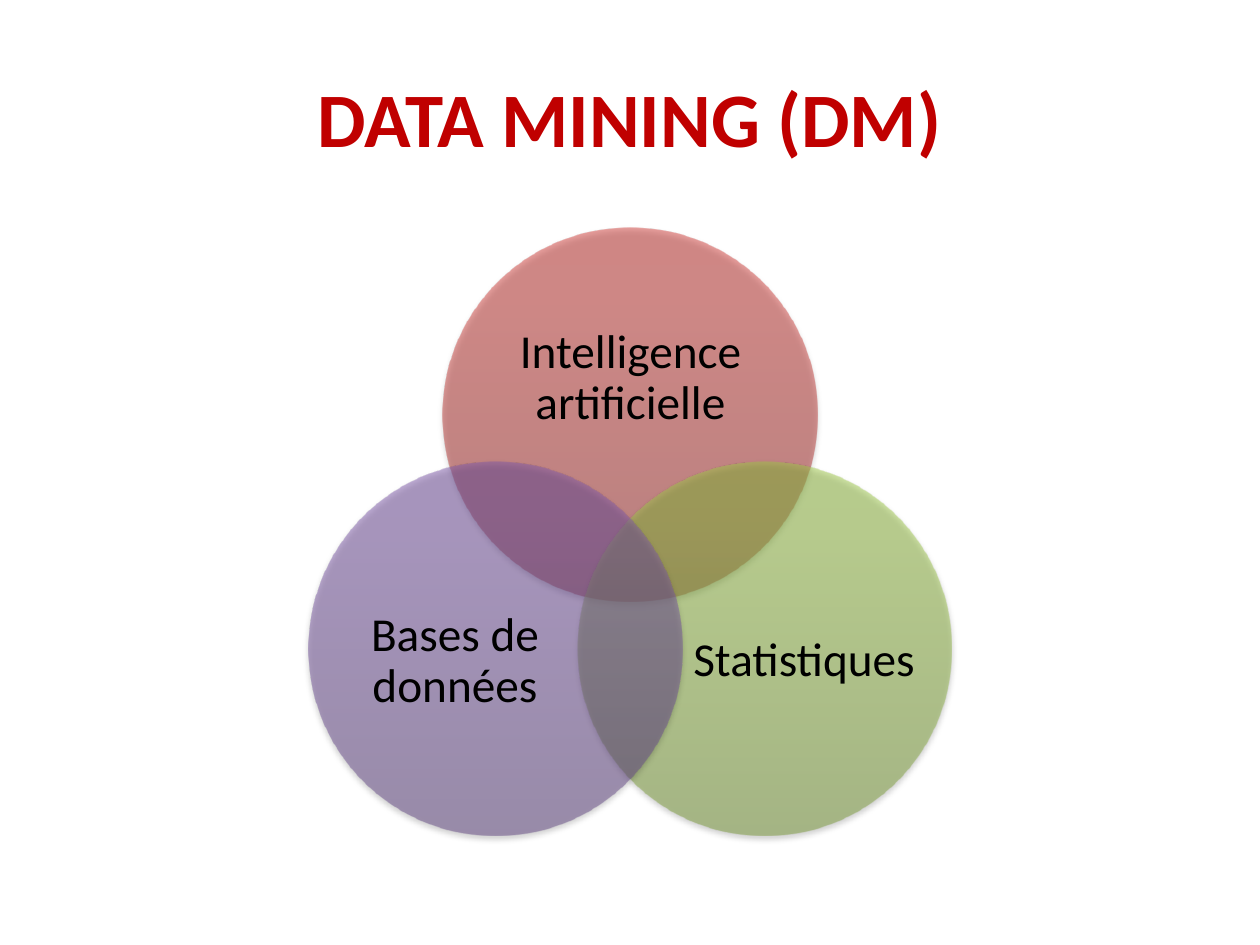
from lxml import etree
from pptx import Presentation
from pptx.dml.color import RGBColor
from pptx.enum.shapes import MSO_SHAPE
from pptx.enum.text import MSO_ANCHOR, PP_ALIGN
from pptx.oxml.ns import qn
from pptx.util import Emu, Pt

OVAL = MSO_SHAPE.OVAL
MIDDLE = MSO_ANCHOR.MIDDLE
CENTER = PP_ALIGN.CENTER
WIDE, HIGH = 1260, 945
SIZE = 374
STOPS = (0, 80, 100)


def px(n):
    """Turn px into EMU at 126 px to the inch."""
    return Emu(round(n * 914400 / 126))


def add_text(slide, text, box, size=27, color="000000", bold=False, lead=0.9):
    """Add centred text in the middle of a box."""
    shape = slide.shapes.add_textbox(*map(px, box))
    frame = shape.text_frame
    frame.word_wrap = True
    frame.vertical_anchor = MIDDLE
    frame.margin_left = frame.margin_right = 0
    frame.margin_top = frame.margin_bottom = 0
    para = frame.paragraphs[0]
    para.alignment = CENTER
    para.line_spacing = lead
    run = para.add_run()
    run.text = text
    run.font.name = "Calibri"
    run.font.size = Pt(size)
    run.font.bold = bold
    run.font.color.rgb = RGBColor.from_string(color)


def add_color(parent, color, alpha):
    """Add a colour with an opacity in percent."""
    node = etree.SubElement(parent, qn("a:srgbClr"), val=color)
    etree.SubElement(node, qn("a:alpha"), val=str(alpha * 1000))


def add_shade(shape, colors):
    """Fill a shape with a half clear gradient that runs upward."""
    shape.fill.gradient()
    shape.fill.gradient_angle = 90
    stops = shape._element.spPr.find(".//" + qn("a:gsLst"))
    for old in list(stops):
        stops.remove(old)
    for pos, color in zip(STOPS, colors):
        stop = etree.SubElement(stops, qn("a:gs"), pos=str(pos * 1000))
        add_color(stop, color, 50)


def add_shadow(shape):
    """Give a shape a soft shadow below it."""
    shape.shadow.inherit = False
    effects = shape._element.spPr.find(qn("a:effectLst"))
    shadow = etree.SubElement(
        effects, qn("a:outerShdw"), blurRad="40000", dist="23000",
        dir="5400000", rotWithShape="0")
    add_color(shadow, "000000", 35)


def add_circle(slide, left, top, colors):
    """Add one circle of the diagram."""
    box = (left, top, SIZE, SIZE)
    shape = slide.shapes.add_shape(OVAL, *map(px, box))
    shape.line.fill.background()
    add_shade(shape, colors)
    add_shadow(shape)


def main():
    """Build the slide and save it."""
    deck = Presentation()
    deck.slide_width, deck.slide_height = px(WIDE), px(HIGH)
    slide = deck.slides.add_slide(deck.slide_layouts[6])
    add_text(slide, "DATA MINING (DM)", (63, 38, 1134, 157),
             size=44, color="C00000", bold=True, lead=1.0)

    mid = (WIDE - SIZE) // 2
    sets = [
        ("Intelligence artificielle", 0, 228, (493, 294, 275, 169),
         ("9C2F2D", "CB3E3A", "CE3B37")),
        ("Statistiques", 135, 462, (692, 559, 224, 205),
         ("779737", "9BC348", "9DC746")),
        ("Bases de données", -135, 462, (343, 559, 224, 205),
         ("5F4480", "7B58A6", "7C57A8")),
    ]
    for text, shift, top, box, colors in sets:
        add_circle(slide, mid + shift, top, colors)
        add_text(slide, text, box)
    deck.save("out.pptx")


if __name__ == "__main__":
    main()
